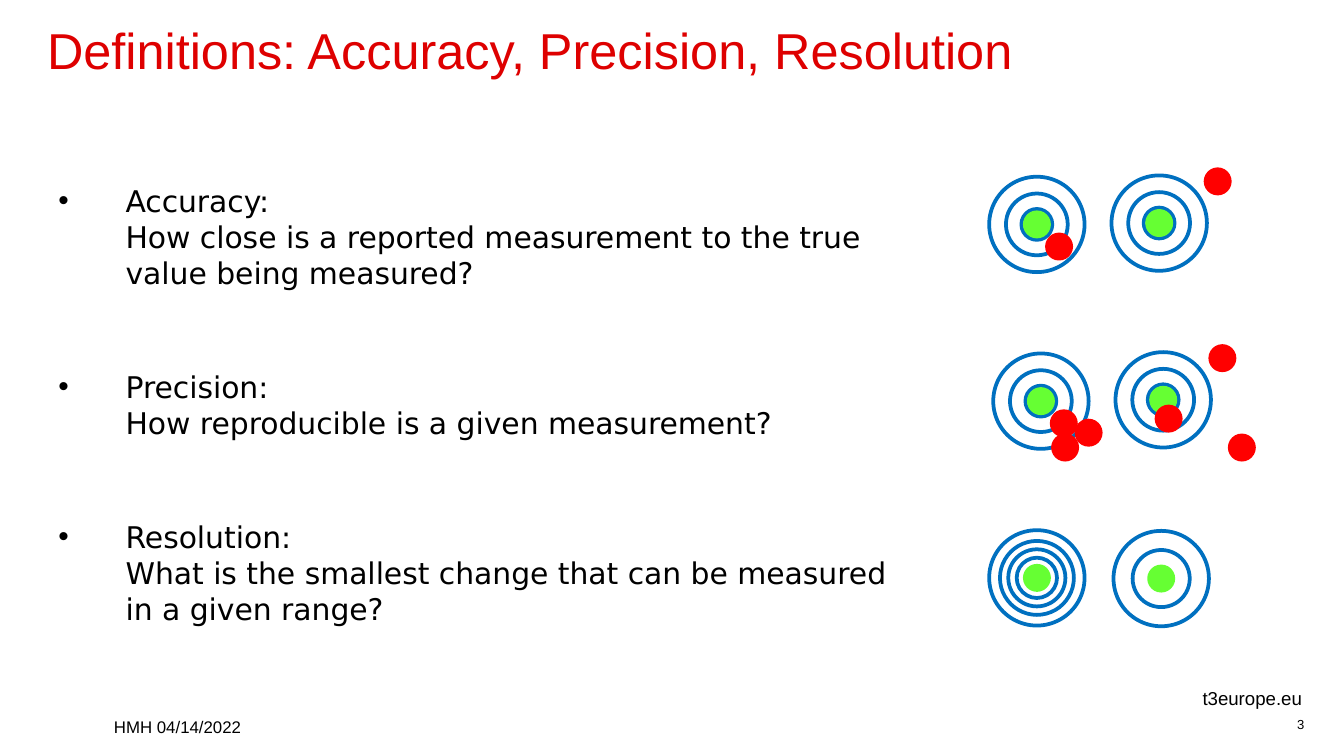
from copy import deepcopy

from pptx import Presentation
from pptx.dml.color import RGBColor
from pptx.enum.shapes import MSO_SHAPE as SHAPE
from pptx.enum.text import MSO_ANCHOR as ANCHOR, PP_ALIGN as ALIGN
from pptx.oxml.ns import qn
from pptx.util import Inches, Pt

BLACK = RGBColor(0x00, 0x00, 0x00)
TITLE_RED = RGBColor(0xDE, 0x00, 0x00)
RING_BLUE = RGBColor(0x00, 0x70, 0xC0)
BULL_GREEN = RGBColor(0x66, 0xFF, 0x33)
HIT_RED = RGBColor(0xFF, 0x00, 0x00)

# The slide is a 16:9 grid of square cells
COLS, ROWS = 100, 56.25
CELLS_PER_INCH = 10

DOT = 1.8  # diameter of bull's-eyes and hits
COARSE = (7.1, 4.6, 2.3)
FINE = (7.1, 5.5, 4.25, 3)
WIDE = (7.1, 4.25)

DEFINITIONS = [
    ("Accuracy:", "How close is a reported measurement to the true value being measured?"),
    ("Precision:", "How reproducible is a given measurement?"),
    ("Resolution:", "What is the smallest change that can be measured in a given range?"),
]

# Centre column, centre row, ring diameters, hits as offsets from the centre
TARGETS = [
    (77.15, 16.7, COARSE, [(1.65, 1.65)]),
    (86.25, 16.6, COARSE, [(4.35, -3.1)]),
    (77.45, 29.85, COARSE, [(1.7, 1.65), (1.8, 3.45), (3.55, 2.35)]),
    (86.55, 29.75, COARSE, [(4.4, -3.1), (5.85, 3.55), (0.4, 1.4)]),
    (77.15, 43, FINE, []),
    (86.4, 43.05, WIDE, []),
]


def grid(n):
    return Inches(n / CELLS_PER_INCH)


def add_text(s, box, paragraphs, size, color=BLACK, font="Arial",
             align=ALIGN.LEFT, insets=(0.8, 0.4, 0.8, 0.4), wrap=True):
    tf = s.shapes.add_textbox(*map(grid, box)).text_frame
    tf.word_wrap = wrap
    tf.vertical_anchor = ANCHOR.TOP
    tf.margin_left, tf.margin_top, tf.margin_right, tf.margin_bottom = map(grid, insets)
    for i, text in enumerate(paragraphs):
        p = tf.paragraphs[0] if i == 0 else tf.add_paragraph()
        p.text = text
        p.alignment = align
        for r in p.runs:
            r.font.size = Pt(size)
            r.font.name = font
            r.font.color.rgb = color
        # Line breaks take the text size as well
        for br in p._p.findall(qn("a:br")):
            br.append(deepcopy(p.runs[0]._r.rPr))
    return tf


def hang(p, bullet=None):
    pPr = p._p.get_or_add_pPr()
    pPr.set("marL", str(grid(5.1)))
    pPr.set("indent", str(grid(-5)))
    if bullet:
        font = pPr.makeelement(qn("a:buFont"), {"typeface": "Arial"})
        char = pPr.makeelement(qn("a:buChar"), {"char": bullet})
        pPr.extend([font, char])


def add_circle(s, x, y, diameter, color, filled=False):
    left, top = grid(x - diameter / 2), grid(y - diameter / 2)
    sp = s.shapes.add_shape(SHAPE.OVAL, left, top, grid(diameter), grid(diameter))
    sp.shadow.inherit = False
    sp.line.color.rgb = color
    sp.line.width = Pt(2)
    if filled:
        sp.fill.solid()
        sp.fill.fore_color.rgb = color
    else:
        sp.fill.background()


def add_target(s, x, y, rings, hits):
    for diameter in rings:
        add_circle(s, x, y, diameter, RING_BLUE)
    add_circle(s, x, y, DOT, BULL_GREEN, filled=True)
    for dx, dy in hits:
        add_circle(s, x + dx, y + dy, DOT, HIT_RED, filled=True)


def add_definitions(s):
    tf = add_text(s, (3.45, 13.2, 65.5, 35.4), ["\n".join(d) for d in DEFINITIONS],
                  16, font="DejaVu Sans")
    for i, p in enumerate(tf.paragraphs):
        if i:
            p.space_before = Pt(42)
        hang(p, "•")


def main():
    prs = Presentation()
    prs.slide_width, prs.slide_height = grid(COLS), grid(ROWS)
    s = prs.slides.add_slide(prs.slide_layouts[6])

    # Title
    tf = add_text(s, (3.4, 2.1, 93.1, 6.7), ["Definitions: Accuracy, Precision, Resolution"],
                  27, TITLE_RED, insets=(0, 0, 0.8, 0.4))
    tf.paragraphs[0].line_spacing = 0.85
    hang(tf.paragraphs[0])

    # Definitions and their targets
    add_definitions(s)
    for target in TARGETS:
        add_target(s, *target)

    # Footer
    label = (1, 0.5, 1, 0.5)
    add_text(s, (88.45, 50.65, 9.4, 2.7), ["t3europe.eu"], 10,
             align=ALIGN.RIGHT, insets=label, wrap=False)
    add_text(s, (7.5, 52.85, 11.6, 2.5), ["HMH 04/14/2022"], 9, insets=label, wrap=False)
    add_text(s, (89.95, 52.9, 7.1, 2.8), ["3"], 7, align=ALIGN.RIGHT,
             insets=(0.8, 0.4, 0, 0.4))

    prs.save("out.pptx")


if __name__ == "__main__":
    main()
